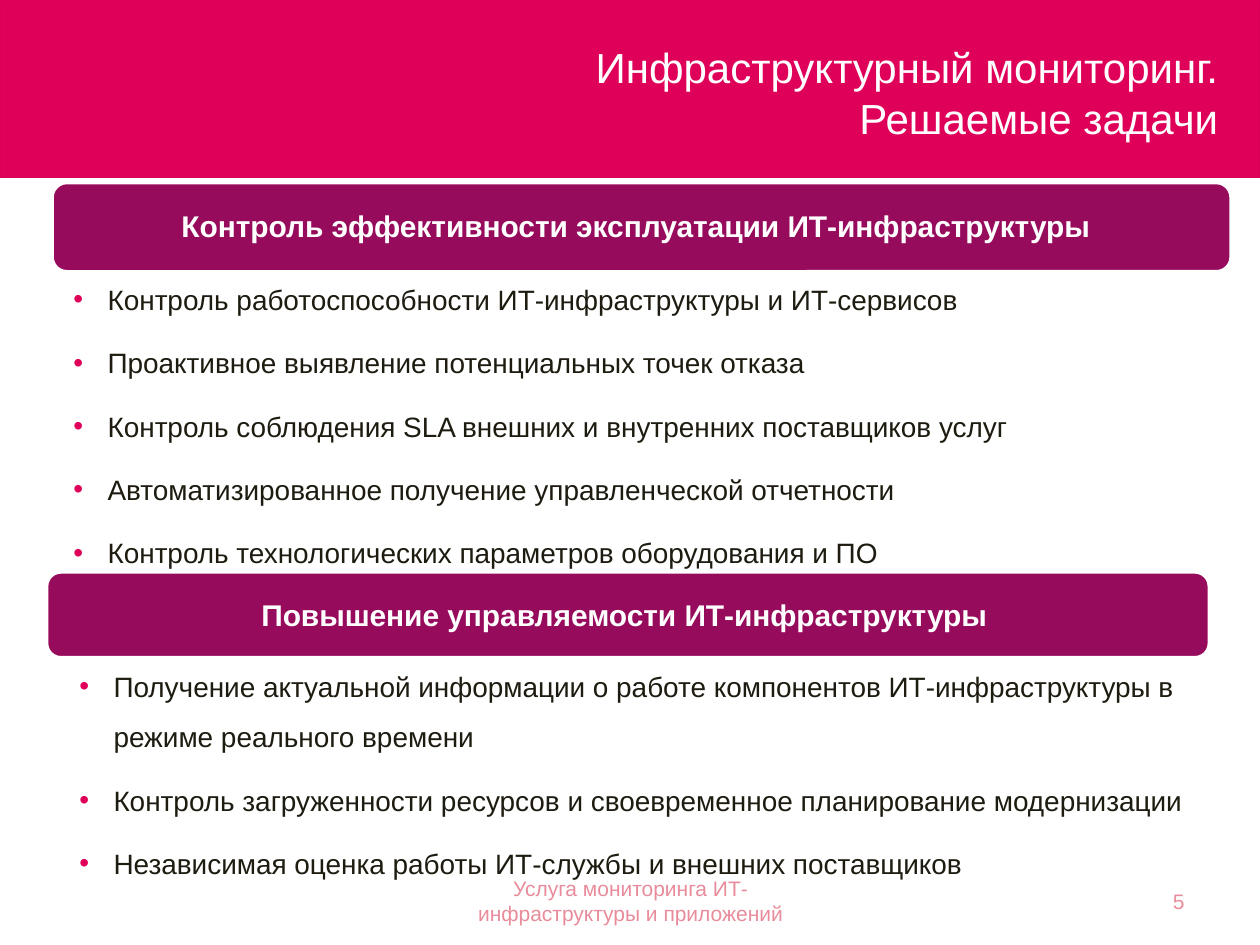
"""Builds the slide on the tasks solved by infrastructure monitoring."""
from lxml.etree import SubElement
from pptx import Presentation
from pptx.dml.color import RGBColor
from pptx.enum.shapes import MSO_SHAPE
from pptx.enum.text import MSO_ANCHOR, PP_ALIGN
from pptx.oxml.ns import qn
from pptx.util import Cm, Pt

FONT = "Arial"
PINK, PLUM, WHITE, INK, ROSE = "DF0059", "970B5D", "FFFFFF", "1E1C11", "E88C9B"
LEFT, CENTER, RIGHT = PP_ALIGN.LEFT, PP_ALIGN.CENTER, PP_ALIGN.RIGHT

TITLE = ["Инфраструктурный мониторинг.", "Решаемые задачи"]
FOOTER = ["Услуга мониторинга ИТ-инфраструктуры и приложений"]
NUMBER = ["5"]
SECTIONS = [
    {
        "heading": "Контроль эффективности эксплуатации ИТ-инфраструктуры",
        "banner": (1.05, 3.68, 23.77, 1.8),
        "label": (1.07, 3.78, 23.5, 1.63),
        "list": (0.74, 5.31, 23.44, 3.71),
        "items": [
            "Контроль работоспособности ИТ-инфраструктуры и ИТ-сервисов",
            "Проактивное выявление потенциальных точек отказа",
            "Контроль соблюдения SLA внешних и внутренних поставщиков услуг",
            "Автоматизированное получение управленческой отчетности",
            "Контроль технологических параметров оборудования и ПО",
        ],
    },
    {
        "heading": "Повышение управляемости ИТ-инфраструктуры",
        "banner": (0.94, 11.53, 23.44, 1.73),
        "label": (0.99, 11.63, 23.19, 1.6),
        "list": (0.86, 13.11, 23.44, 0.99),
        "items": [
            "Получение актуальной информации о работе компонентов ИТ-инфраструктуры в режиме реального времени",
            "Контроль загруженности ресурсов и своевременное планирование модернизации",
            "Независимая оценка работы ИТ-службы и внешних поставщиков",
        ],
    },
]


def rgb(color):
    return RGBColor.from_string(color)


def add_box(s, kind, at, fill, line, width):
    sp = s.shapes.add_shape(kind, *map(Cm, at))
    sp.shadow.inherit = False
    sp.fill.solid()
    sp.fill.fore_color.rgb = rgb(fill)
    sp.line.color.rgb = rgb(line)
    sp.line.width = Pt(width)


def add_text(s, at, lines, size, color, align, anchor=MSO_ANCHOR.MIDDLE,
             insets=(0.25, 0.13, 0.25, 0.13), spacing=1.0, bold=False):
    tf = s.shapes.add_textbox(*map(Cm, at)).text_frame
    tf.word_wrap = True
    tf.vertical_anchor = anchor
    tf.margin_left, tf.margin_top, tf.margin_right, tf.margin_bottom = map(Cm, insets)
    tf.text = "\n".join(lines)
    for p in tf.paragraphs:
        p.alignment = align
        p.line_spacing = spacing
        for r in p.runs:
            r.font.name = FONT
            r.font.size = Pt(size)
            r.font.bold = bold
            r.font.color.rgb = rgb(color)
    return tf


def add_bullets(tf, color, indent=0.69, gap=3.7):
    for i, p in enumerate(tf.paragraphs):
        p.space_before = Pt(gap if i else 0)
        p.space_after = Pt(gap)
        pr = p._p.get_or_add_pPr()
        pr.set("marL", str(Cm(indent)))
        pr.set("indent", str(-Cm(indent)))
        SubElement(SubElement(pr, qn("a:buClr")), qn("a:srgbClr"), val=color)
        SubElement(pr, qn("a:buFont"), typeface=FONT)
        SubElement(pr, qn("a:buChar"), char="•")


def main():
    prs = Presentation()
    prs.slide_width, prs.slide_height = Cm(25.4), Cm(19.05)
    s = prs.slides.add_slide(prs.slide_layouts[6])

    add_box(s, MSO_SHAPE.RECTANGLE, (0, 0, 25.4, 3.58), PINK, "DA0057", 0.75)
    add_text(s, (9.98, 0.71, 14.83, 2.29), TITLE, 24, WHITE, RIGHT, MSO_ANCHOR.TOP)

    for section in SECTIONS:
        add_box(s, MSO_SHAPE.ROUNDED_RECTANGLE, section["banner"], PLUM, WHITE, 2)
        add_text(s, section["label"], [section["heading"]], 17.1, WHITE, CENTER,
                 insets=(0.18,) * 4, spacing=0.9, bold=True)
        tf = add_text(s, section["list"], section["items"], 16, INK, LEFT,
                      MSO_ANCHOR.TOP, (0.74, 0.05, 0.3, 0.05), 1.5)
        add_bullets(tf, PINK)

    add_text(s, (18.21, 17.65, 5.92, 1.02), NUMBER, 12, ROSE, RIGHT)
    add_text(s, (8.69, 17.65, 8.05, 1.02), FOOTER, 12, ROSE, CENTER)
    prs.save("out.pptx")


if __name__ == "__main__":
    main()
